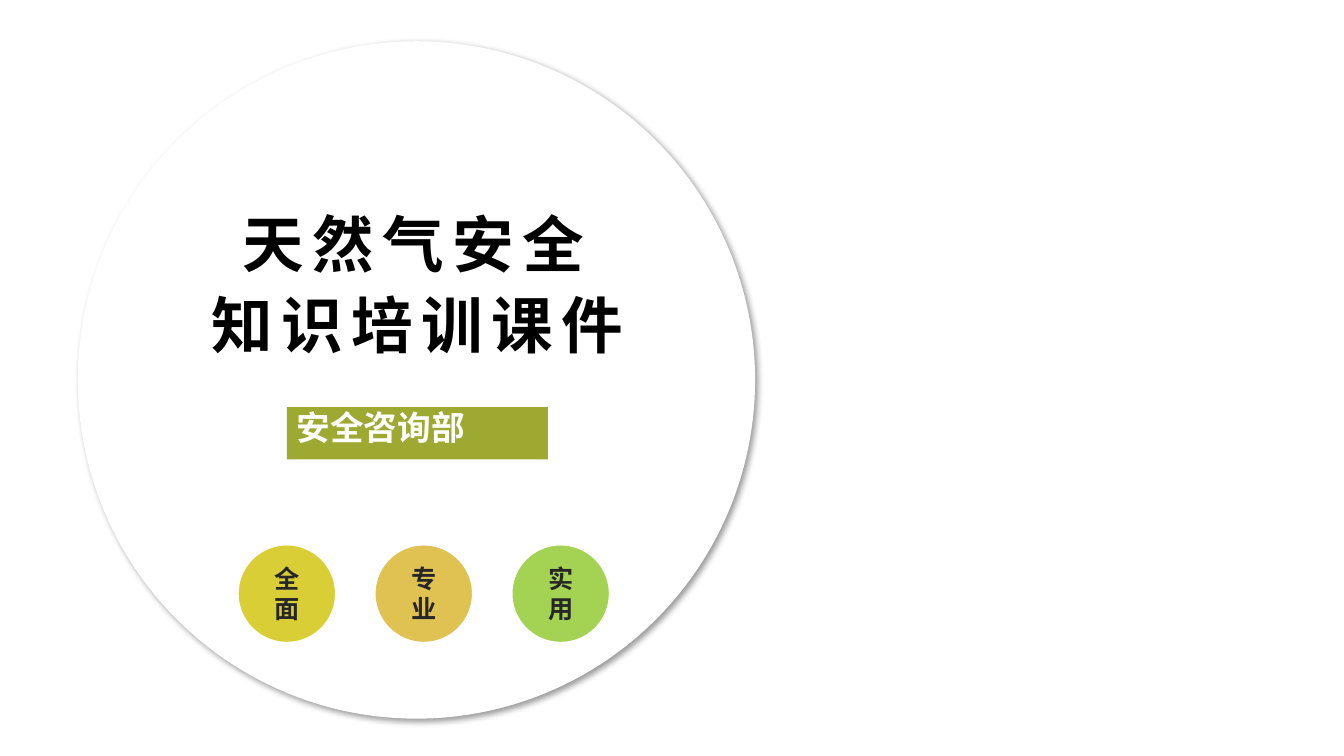
from dataclasses import dataclass

from lxml import etree
from pptx import Presentation
from pptx.dml.color import RGBColor
from pptx.enum.shapes import MSO_SHAPE
from pptx.enum.text import MSO_ANCHOR, PP_ALIGN
from pptx.oxml.ns import qn
from pptx.util import Cm, Pt

OVAL, RECT = MSO_SHAPE.OVAL, MSO_SHAPE.RECTANGLE
TOP, MIDDLE, BOTTOM = MSO_ANCHOR.TOP, MSO_ANCHOR.MIDDLE, MSO_ANCHOR.BOTTOM
CENTER, JUSTIFY = PP_ALIGN.CENTER, PP_ALIGN.JUSTIFY


@dataclass(frozen=True)
class Theme:
    white: str = "FFFFFF"
    black: str = "000000"
    dark: str = "262626"
    olive: str = "9EA932"
    badges: tuple = ("DACE36", "E0C252", "A4D252")
    title_size: int = 44
    name_size: int = 24
    badge_size: int = 18
    title_font: str = "Noto Sans CJK JP"
    body_font: str = "Noto Sans CJK SC"
    badge_font: str = "Arial"


THEME = Theme()


def add_filled(slide, kind, box, fill, border=None):
    sp = slide.shapes.add_shape(kind, *map(Cm, box))
    sp.shadow.inherit = False
    sp.fill.solid()
    sp.fill.fore_color.rgb = RGBColor.from_string(fill)
    if border:
        sp.line.color.rgb = RGBColor.from_string(border)
        sp.line.width = Pt(1.5)
    else:
        sp.line.fill.background()
    return sp


def add_soft_shadow(sp):
    effects = sp._element.spPr.find(qn("a:effectLst"))
    shadow = etree.SubElement(effects, qn("a:outerShdw"), blurRad=str(Pt(4)),
                              dist=str(Pt(3)), dir=str(45 * 60000),
                              algn="tl", rotWithShape="0")
    color = etree.SubElement(shadow, qn("a:srgbClr"), val=THEME.black)
    etree.SubElement(color, qn("a:alpha"), val="40000")


def set_text(sp, text, size, color, latin, asian, align=CENTER, anchor=MIDDLE):
    """Write one bold paragraph; a vertical tab in the text is a line break."""
    tf = sp.text_frame
    tf.word_wrap = True
    tf.vertical_anchor = anchor
    p = tf.paragraphs[0]
    p.text = text
    p.alignment = align
    p.font.size = Pt(size)
    p.font.bold = True
    p.font.color.rgb = RGBColor.from_string(color)
    p.font.name = latin
    for r in p.runs:
        props = r._r.get_or_add_rPr()
        etree.SubElement(props, qn("a:ea"), typeface=asian)
    return p


def add_title(slide, text):
    sp = slide.shapes.add_textbox(Cm(1.68), Cm(4.65), Cm(17.68), Cm(4.45))
    p = set_text(sp, text, THEME.title_size, THEME.black,
                 THEME.title_font, THEME.title_font, anchor=BOTTOM)
    p.line_spacing = 1.1
    sp.text_frame.margin_bottom = 0
    for r in p.runs:
        r._r.get_or_add_rPr().set("spc", "600")


def add_name_bar(slide, text):
    sp = add_filled(slide, RECT, (7.23, 10.26, 6.58, 1.32), THEME.olive)
    set_text(sp, text, THEME.name_size, THEME.white,
             THEME.body_font, THEME.body_font, JUSTIFY, TOP)
    sp.text_frame.margin_top = sp.text_frame.margin_bottom = 0


def add_badges(slide, words):
    left, top, size, step = 5.99, 13.72, 2.48, 3.45
    for i, (word, fill) in enumerate(zip(words, THEME.badges)):
        sp = add_filled(slide, OVAL, (left + i * step, top, size, size),
                        fill, THEME.white)
        set_text(sp, word, THEME.badge_size, THEME.dark,
                 THEME.badge_font, THEME.body_font)


def main():
    prs = Presentation()
    prs.slide_width, prs.slide_height = Cm(33.87), Cm(19.05)
    slide = prs.slides.add_slide(prs.slide_layouts[6])
    disc = add_filled(slide, OVAL, (1.96, 1.04, 17.07, 17.07), THEME.white)
    add_soft_shadow(disc)
    add_title(slide, "天然气安全\v知识培训课件")
    add_name_bar(slide, "安全咨询部")
    add_badges(slide, ("全面", "专业", "实用"))
    prs.save("out.pptx")


if __name__ == "__main__":
    main()
